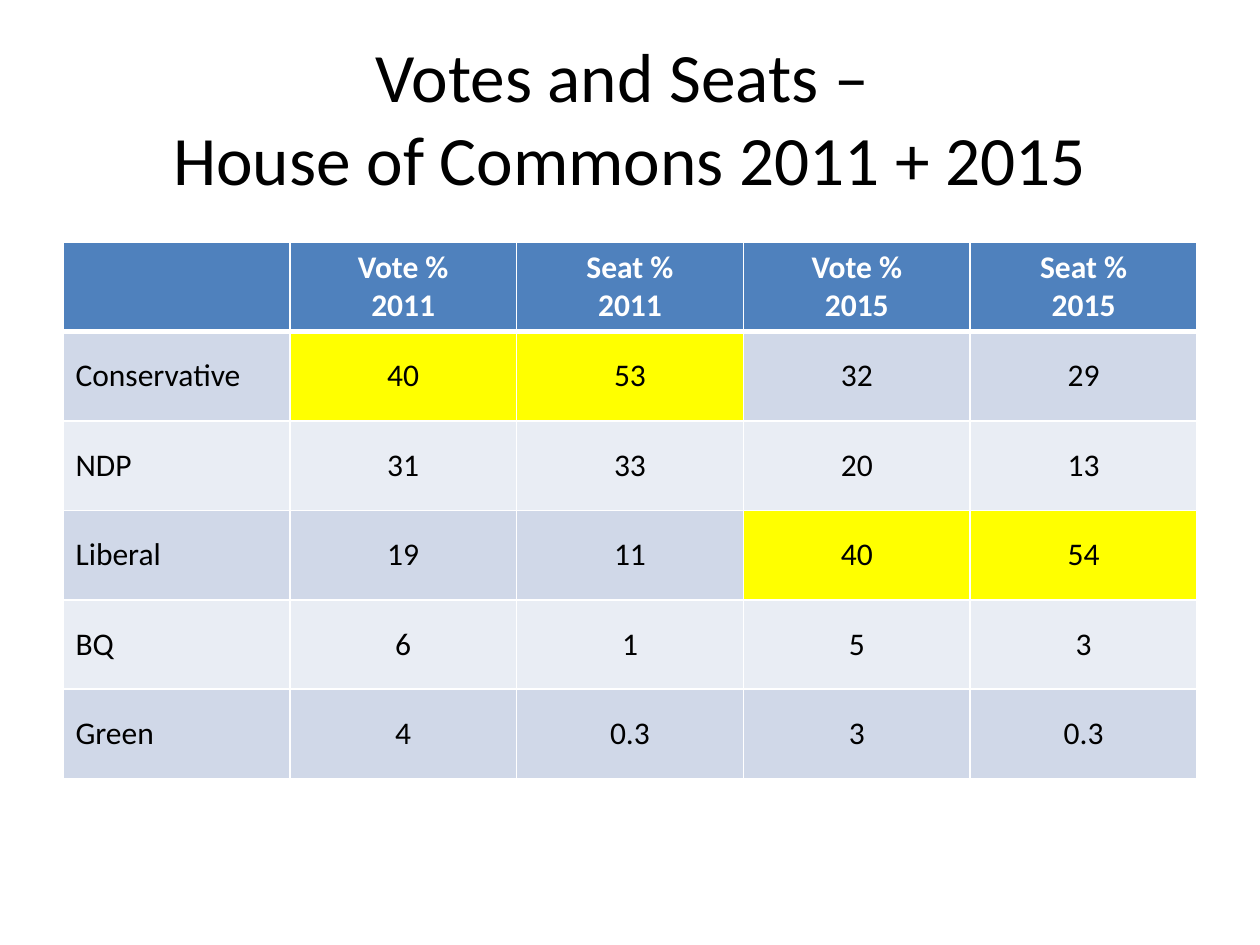
"""Build a slide comparing vote and seat shares in the House of Commons."""
import lxml.etree
import pptx
import pptx.dml.color
import pptx.enum.text
import pptx.oxml.ns
import pptx.util

Inches, Pt = pptx.util.Inches, pptx.util.Pt
RGBColor = pptx.dml.color.RGBColor
PP_ALIGN, MSO_ANCHOR = pptx.enum.text.PP_ALIGN, pptx.enum.text.MSO_ANCHOR
qn = pptx.oxml.ns.qn

TITLE = "Votes and Seats – \vHouse of Commons 2011 + 2015"
HEADINGS = ["", "Vote %\n2011", "Seat %\n2011", "Vote %\n2015", "Seat %\n2015"]
RESULTS = [
    ["Conservative", "40", "53", "32", "29"],
    ["NDP", "31", "33", "20", "13"],
    ["Liberal", "19", "11", "40", "54"],
    ["BQ", "6", "1", "5", "3"],
    ["Green", "4", "0.3", "3", "0.3"],
]
WINNERS = {(1, 1), (1, 2), (3, 3), (3, 4)}

FONT = "Calibri"
BLACK = RGBColor(0x00, 0x00, 0x00)
WHITE = RGBColor(0xFF, 0xFF, 0xFF)
HEADER_BLUE = RGBColor(0x4F, 0x81, 0xBD)
BANDS = [RGBColor(0xE9, 0xED, 0xF4), RGBColor(0xD0, 0xD8, 0xE8)]
YELLOW = RGBColor(0xFF, 0xFF, 0x00)


def style_font(font, size, color, bold=False):
    font.name, font.size, font.bold = FONT, Pt(size), bold
    font.color.rgb = color


def add_border(cell, side, points):
    properties = cell._tc.get_or_add_tcPr()
    line = lxml.etree.SubElement(properties, qn(f"a:ln{side}"), w=str(Pt(points)))
    fill = lxml.etree.SubElement(line, qn("a:solidFill"))
    lxml.etree.SubElement(fill, qn("a:srgbClr"), val=str(WHITE))


def format_cell(cell, row, column):
    is_header = row == 0
    for side in "LRTB":
        at_header_edge = (row, side) in {(0, "B"), (1, "T")}
        add_border(cell, side, 3 if at_header_edge else 1)
    cell.fill.solid()
    if is_header:
        cell.fill.fore_color.rgb = HEADER_BLUE
    else:
        cell.fill.fore_color.rgb = YELLOW if (row, column) in WINNERS else BANDS[row % 2]
        cell.vertical_anchor = MSO_ANCHOR.MIDDLE
    for paragraph in cell.text_frame.paragraphs:
        paragraph.alignment = PP_ALIGN.CENTER if column else PP_ALIGN.LEFT
        style_font(paragraph.font, 18, WHITE if is_header else BLACK, is_header)
        for run in paragraph.runs:
            style_font(run.font, 18, WHITE if is_header else BLACK, is_header)


def main():
    deck = pptx.Presentation()
    deck.slide_width, deck.slide_height = Inches(10), Inches(7.5)
    slide = deck.slides.add_slide(deck.slide_layouts[5])

    title = slide.shapes.title
    title.left, title.top = Inches(0.5), Inches(0.3)
    title.width, title.height = Inches(9), Inches(1.25)
    title.text_frame.text = TITLE
    title.text_frame.vertical_anchor = MSO_ANCHOR.MIDDLE
    heading = title.text_frame.paragraphs[0]
    heading.alignment = PP_ALIGN.CENTER
    style_font(heading.font, 39.6, BLACK)
    for run in heading.runs:
        style_font(run.font, 39.6, BLACK)

    rows = [HEADINGS] + RESULTS
    shares = slide.shapes.add_table(
        len(rows), len(HEADINGS), Inches(0.5), Inches(1.92), Inches(9), Inches(4.25)
    ).table
    for row, texts in enumerate(rows):
        shares.rows[row].height = Inches(0.71)
        for column, text in enumerate(texts):
            cell = shares.cell(row, column)
            cell.text_frame.text = text
            format_cell(cell, row, column)

    deck.save("out.pptx")


if __name__ == "__main__":
    main()
